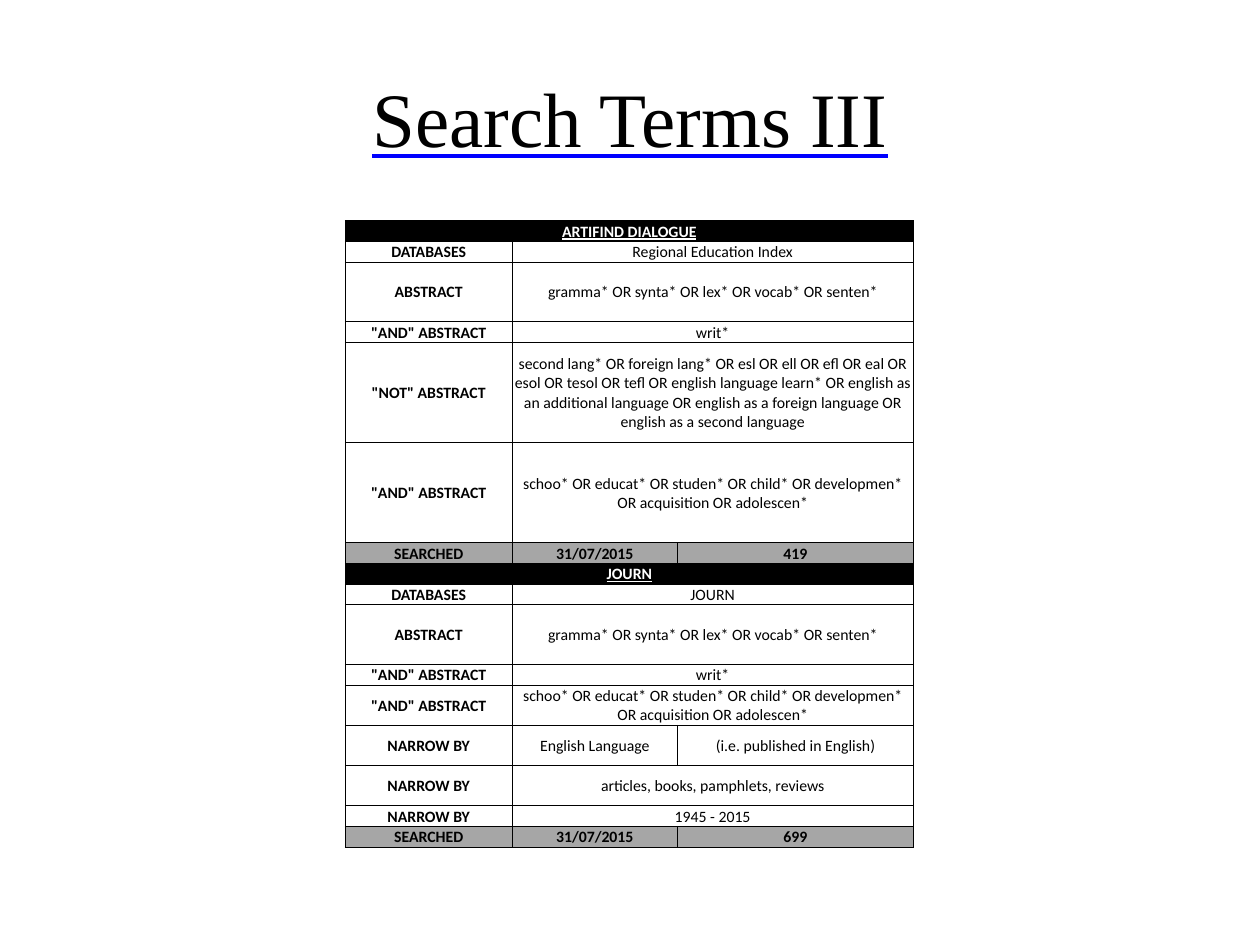
"""Build a slide that tabulates the search terms used in two databases."""
from dataclasses import dataclass

from lxml.etree import SubElement
from pptx import Presentation
from pptx.dml.color import RGBColor
from pptx.enum.text import MSO_ANCHOR as Anchor, PP_ALIGN as Align
from pptx.oxml import parse_xml
from pptx.oxml.ns import nsdecls, qn
from pptx.util import Cm, Pt

BLACK = RGBColor(0x00, 0x00, 0x00)
WHITE = RGBColor(0xFF, 0xFF, 0xFF)
GREY = RGBColor(0xA6, 0xA6, 0xA6)
BLUE = RGBColor(0x00, 0x00, 0xFF)

LINE, DOUBLE, TRIPLE, TALL = Cm(0.41), Cm(0.81), Cm(1.2), Cm(2.02)
COL_WIDTHS = Cm(3.36), Cm(3.34), Cm(4.75)

GRAMMAR = "gramma* OR synta* OR lex* OR vocab* OR senten*"
LEARNERS = "schoo* OR educat* OR studen* OR child* OR developmen* OR acquisition OR adolescen*"
SECOND_LANG = (
    "second lang* OR foreign lang* OR esl OR ell OR efl OR eal OR esol OR tesol OR tefl "
    "OR english language learn* OR english as an additional language "
    "OR english as a foreign language OR english as a second language"
)


@dataclass(frozen=True)
class Row:
    texts: tuple[str, ...]
    height: int = LINE
    fill: RGBColor | None = None


def heading(text: str) -> Row:
    return Row((text,), fill=BLACK)


def searched(date: str, hits: str) -> Row:
    return Row(("SEARCHED", date, hits), fill=GREY)


ROWS = [
    heading("ARTIFIND DIALOGUE"),
    Row(("DATABASES", "Regional Education Index")),
    Row(("ABSTRACT", GRAMMAR), TRIPLE),
    Row(('"AND" ABSTRACT', "writ*")),
    Row(('"NOT" ABSTRACT', SECOND_LANG), TALL),
    Row(('"AND" ABSTRACT', LEARNERS), TALL),
    searched("31/07/2015", "419"),
    heading("JOURN"),
    Row(("DATABASES", "JOURN")),
    Row(("ABSTRACT", GRAMMAR), TRIPLE),
    Row(('"AND" ABSTRACT', "writ*")),
    Row(('"AND" ABSTRACT', LEARNERS), DOUBLE),
    Row(("NARROW BY", "English Language", "(i.e. published in English)"), DOUBLE),
    Row(("NARROW BY", "articles, books, pamphlets, reviews"), DOUBLE),
    Row(("NARROW BY", "1945 - 2015")),
    searched("31/07/2015", "699"),
]


def write(tf, text: str, *, size: float = 9, font: str = "Calibri", color: RGBColor = BLACK,
          bold: bool = False, underline: bool = False):
    p = tf.paragraphs[0]
    p.alignment = Align.CENTER
    r = p.add_run()
    r.text = text
    r.font.size, r.font.name = Pt(size), font
    r.font.bold, r.font.underline = bold, underline
    r.font.color.rgb = color
    return r


def color_underline(r, color: RGBColor) -> None:
    r.font.fill._xPr.find(qn("a:solidFill")).addnext(parse_xml(
        f'<a:uFill {nsdecls("a")}><a:solidFill><a:srgbClr val="{color}"/></a:solidFill></a:uFill>'))


def add_borders(cell, color: RGBColor = BLACK, width: float = 0.5) -> None:
    tc_pr = cell._tc.get_or_add_tcPr()
    for i, side in enumerate(("lnL", "lnR", "lnT", "lnB")):
        ln = SubElement(tc_pr, qn(f"a:{side}"), w=str(Pt(width)))
        fill = SubElement(ln, qn("a:solidFill"))
        SubElement(fill, qn("a:srgbClr"), val=str(color))
        tc_pr.insert(i, ln)


def format_cell(cell, fill: RGBColor | None) -> None:
    cell.margin_left = cell.margin_right = cell.margin_top = Cm(0.03)
    cell.margin_bottom = 0
    cell.vertical_anchor = Anchor.MIDDLE
    if fill is None:
        cell.fill.background()
    else:
        cell.fill.solid()
        cell.fill.fore_color.rgb = fill
    add_borders(cell)


def fill_row(table, index: int, row: Row) -> None:
    table.rows[index].height = row.height
    cells = [table.cell(index, j) for j in range(len(COL_WIDTHS))]
    for cell in cells:
        format_cell(cell, row.fill)
    last = len(row.texts) - 1
    if cells[last] is not cells[-1]:
        cells[last].merge(cells[-1])
    is_heading = row.fill == BLACK
    for j, text in enumerate(row.texts):
        write(cells[j].text_frame, text, color=WHITE if is_heading else BLACK,
              bold=j == 0 or row.fill is not None, underline=is_heading)


def add_search_table(s, rows: list[Row]) -> None:
    table = s.shapes.add_table(len(rows), len(COL_WIDTHS), Cm(6.96), Cm(4.45),
                               sum(COL_WIDTHS), sum(row.height for row in rows)).table
    table.first_row = table.horz_banding = False
    for col, width in zip(table.columns, COL_WIDTHS):
        col.width = width
    for i, row in enumerate(rows):
        fill_row(table, i, row)


def add_title(s, text: str) -> None:
    sp = s.shapes.title
    sp.left, sp.top, sp.width, sp.height = Cm(1.27), Cm(0.76), Cm(22.86), Cm(3.18)
    sp.text_frame.vertical_anchor = Anchor.MIDDLE
    r = write(sp.text_frame, text, size=44, font="Times New Roman", underline=True)
    color_underline(r, BLUE)


def main() -> None:
    prs = Presentation()
    prs.slide_width, prs.slide_height = Cm(25.4), Cm(19.05)
    s = prs.slides.add_slide(prs.slide_layouts[5])
    add_search_table(s, ROWS)
    add_title(s, "Search Terms III")
    prs.save("out.pptx")


if __name__ == "__main__":
    main()
